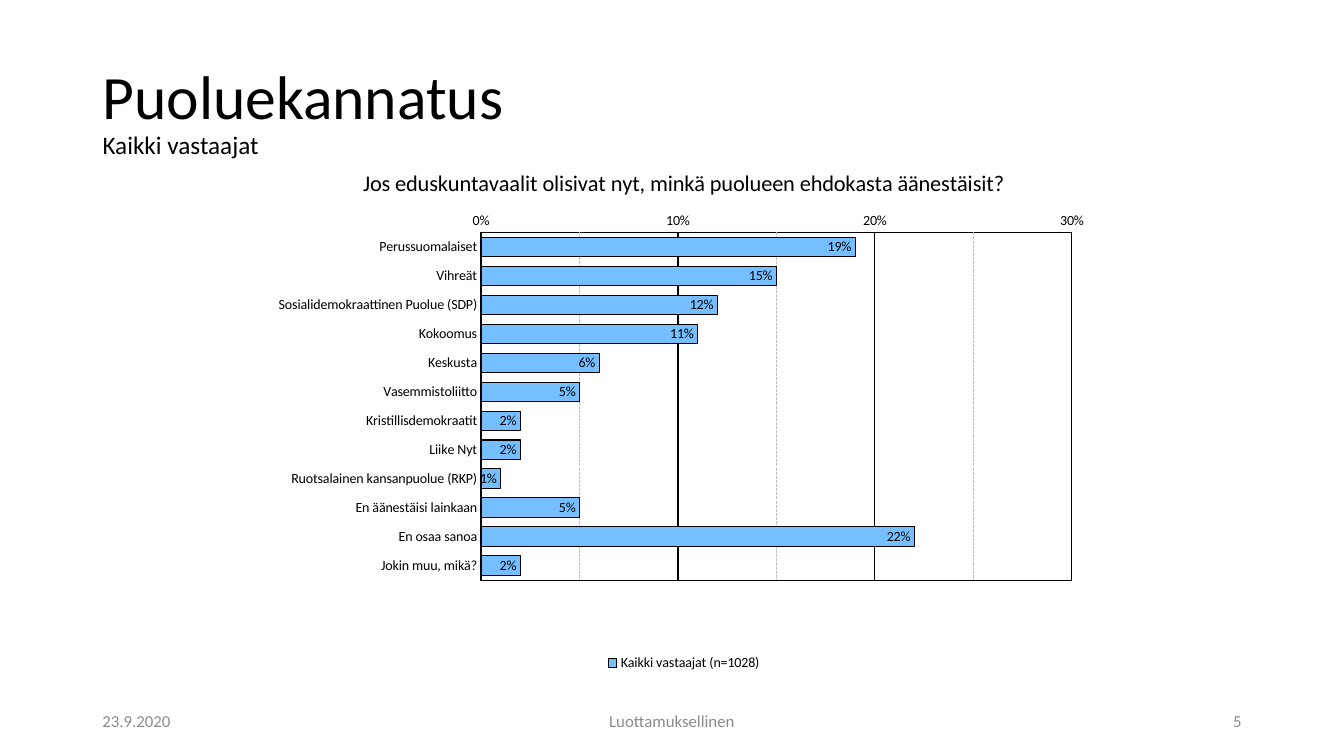
import dataclasses

import pptx
import pptx.chart.data
import pptx.dml.color
import pptx.enum.chart
import pptx.enum.text
import pptx.oxml
import pptx.oxml.ns
import pptx.util
from pptx.util import Cm, Pt

FONT = "Calibri"
BLACK, GREY, LIGHT_GREY, BLUE = "000000", "8C8C8C", "BFBFBF", "75BEFF"
ALIGN = pptx.enum.text.PP_ALIGN
NS = pptx.oxml.ns.nsdecls("c", "a")


@dataclasses.dataclass
class FooterItem:
    text: str
    left: float
    width: float
    align: ALIGN


@dataclasses.dataclass
class Answer:
    label: str
    share: float


FOOTER = [
    FooterItem("23.9.2020", 2.33, 7.62, ALIGN.LEFT),
    FooterItem("Luottamuksellinen", 11.22, 11.43, ALIGN.CENTER),
    FooterItem("5", 23.92, 7.62, ALIGN.RIGHT),
]
ANSWERS = [
    Answer("Perussuomalaiset", 0.19),
    Answer("Vihreät", 0.15),
    Answer("Sosialidemokraattinen Puolue (SDP)", 0.12),
    Answer("Kokoomus", 0.11),
    Answer("Keskusta", 0.06),
    Answer("Vasemmistoliitto", 0.05),
    Answer("Kristillisdemokraatit", 0.02),
    Answer("Liike Nyt", 0.02),
    Answer("Ruotsalainen kansanpuolue (RKP)", 0.01),
    Answer("En äänestäisi lainkaan", 0.05),
    Answer("En osaa sanoa", 0.22),
    Answer("Jokin muu, mikä?", 0.02),
]


def rgb(colour: str) -> pptx.dml.color.RGBColor:
    return pptx.dml.color.RGBColor.from_string(colour)


def set_font(font, size: float, colour: str = BLACK) -> None:
    font.name, font.size, font.bold = FONT, Pt(size), False
    font.color.rgb = rgb(colour)


def set_line(line, colour: str = BLACK) -> None:
    line.color.rgb = rgb(colour)
    line.width = Pt(0.75)


def outline_xml(colour: str, dash: str):
    return pptx.oxml.parse_xml(
        f'<c:spPr {NS}><a:noFill/><a:ln w="{Pt(0.75)}"><a:solidFill>'
        f'<a:srgbClr val="{colour}"/></a:solidFill>'
        f'<a:prstDash val="{dash}"/></a:ln></c:spPr>')


def add_run(p, text: str, size: float, colour: str = BLACK) -> None:
    r = p.add_run()
    r.text = text
    set_font(r.font, size, colour)


def add_title(s) -> None:
    sp = s.shapes.title
    sp.left, sp.top, sp.width, sp.height = Cm(2.33), Cm(1.01), Cm(29.21), Cm(3.68)
    tf = sp.text_frame
    tf.auto_size = pptx.enum.text.MSO_AUTO_SIZE.NONE
    tf.vertical_anchor = pptx.enum.text.MSO_ANCHOR.MIDDLE
    p = tf.paragraphs[0]
    p.alignment, p.line_spacing = ALIGN.LEFT, 0.9
    add_run(p, "Puoluekannatus", 44)
    p.add_line_break()
    add_run(p, "Kaikki vastaajat", 18)


def add_footer_item(s, item: FooterItem) -> None:
    sp = s.shapes.add_textbox(Cm(item.left), Cm(17.65), Cm(item.width), Cm(1.01))
    tf = sp.text_frame
    tf.word_wrap = True
    tf.vertical_anchor = pptx.enum.text.MSO_ANCHOR.MIDDLE
    p = tf.paragraphs[0]
    p.alignment = item.align
    add_run(p, item.text, 12, GREY)


def format_axes(chart) -> None:
    no_tick = pptx.enum.chart.XL_TICK_MARK.NONE
    cat, val = chart.category_axis, chart.value_axis
    for axis in (cat, val):
        axis.major_tick_mark = axis.minor_tick_mark = no_tick
        set_font(axis.tick_labels.font, 10)

    # First answer on top, percentages below the plot
    cat.reverse_order = True
    cat.crosses = pptx.enum.chart.XL_AXIS_CROSSES.MAXIMUM
    set_line(cat.format.line)

    val.minimum_scale, val.maximum_scale = 0, 0.3
    val.major_unit, val.minor_unit = 0.1, 0.05
    val.tick_labels.number_format = "0%"
    val.tick_labels.number_format_is_linked = False
    val.format.line.fill.background()
    val.has_major_gridlines = val.has_minor_gridlines = True
    set_line(val.major_gridlines.format.line)
    minor = val._element.find(pptx.oxml.ns.qn("c:minorGridlines"))
    minor.append(outline_xml(LIGHT_GREY, "sysDash"))


def format_bars(chart) -> None:
    plot = chart.plots[0]
    plot.gap_width = 50
    plot.vary_by_categories = False
    series = plot.series[0]
    series.invert_if_negative = False
    series.format.fill.solid()
    series.format.fill.fore_color.rgb = rgb(BLUE)
    set_line(series.format.line)
    labels = series.data_labels
    labels.show_value = True
    labels.number_format, labels.number_format_is_linked = "0%", False
    labels.position = pptx.enum.chart.XL_LABEL_POSITION.INSIDE_END
    set_font(labels.font, 10)


def format_plot_area(chart) -> None:
    area = chart._chartSpace.chart.plotArea
    for layout in area.findall(pptx.oxml.ns.qn("c:layout")):
        area.remove(layout)
    parts = [("layoutTarget", "inner"), ("xMode", "edge"), ("yMode", "edge"),
             ("x", 0.27), ("y", 0.16), ("w", 0.67), ("h", 0.66)]
    values = "".join(f'<c:{tag} val="{value}"/>' for tag, value in parts)
    area.insert(0, pptx.oxml.parse_xml(
        f"<c:layout {NS}><c:manualLayout>{values}</c:manualLayout></c:layout>"))
    area.append(outline_xml(BLACK, "solid"))


def add_support_chart(s) -> None:
    data = pptx.chart.data.CategoryChartData(number_format="0%")
    data.categories = [answer.label for answer in ANSWERS]
    data.add_series("Kaikki vastaajat (n=1028)", [answer.share for answer in ANSWERS])
    chart = s.shapes.add_chart(
        pptx.enum.chart.XL_CHART_TYPE.BAR_CLUSTERED,
        Cm(6.12), Cm(3.73), Cm(22.23), Cm(13.28), data).chart
    set_font(chart.font, 10)
    chart.has_title = True
    chart.chart_title.include_in_layout = False
    add_run(chart.chart_title.text_frame.paragraphs[0],
            "Jos eduskuntavaalit olisivat nyt, minkä puolueen ehdokasta äänestäisit?", 16)
    chart.has_legend = True
    chart.legend.position = pptx.enum.chart.XL_LEGEND_POSITION.BOTTOM
    chart.legend.include_in_layout = False
    set_font(chart.legend.font, 10)
    format_axes(chart)
    format_bars(chart)
    format_plot_area(chart)


def main() -> None:
    prs = pptx.Presentation()
    prs.slide_width, prs.slide_height = Cm(33.87), Cm(19.05)
    s = prs.slides.add_slide(prs.slide_layouts[5])
    add_title(s)
    for item in FOOTER:
        add_footer_item(s, item)
    add_support_chart(s)
    prs.save("out.pptx")


if __name__ == "__main__":
    main()
